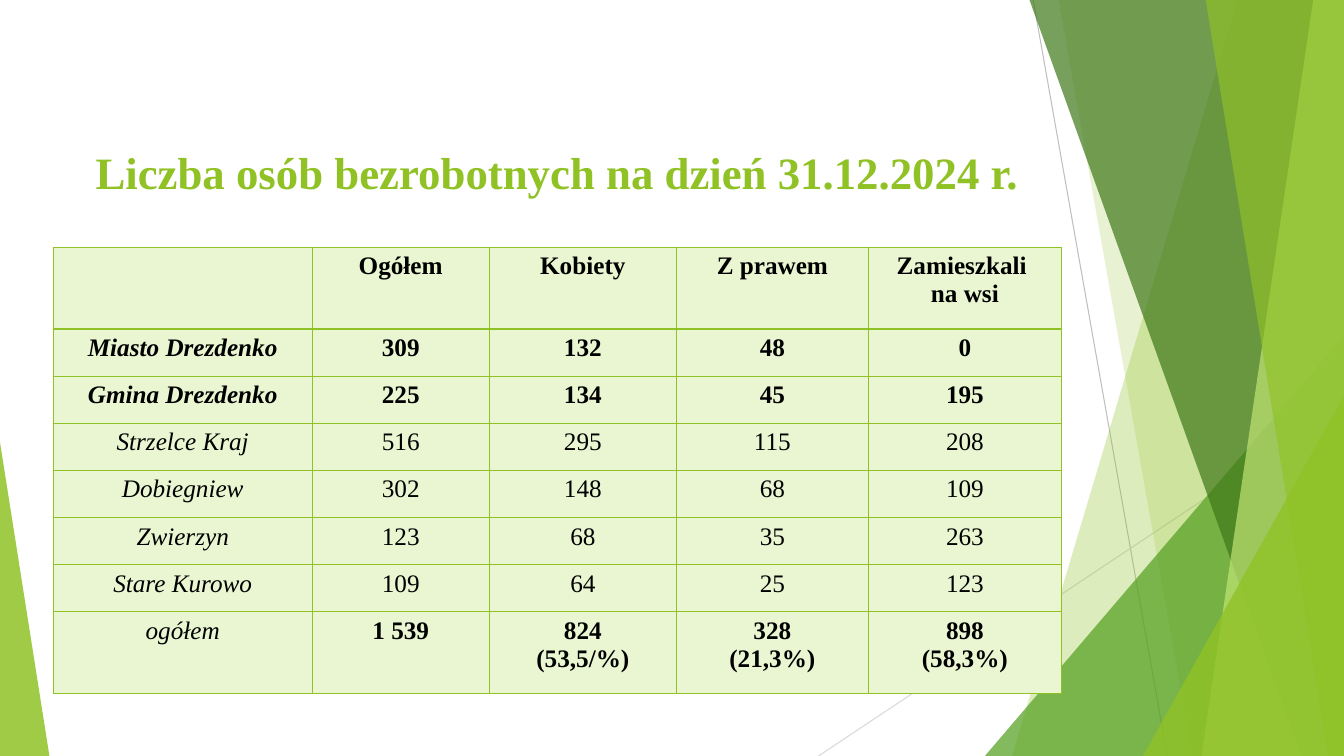
"""Build a slide with a table of unemployment figures by municipality."""

from dataclasses import dataclass

from lxml import etree
from pptx import Presentation
from pptx import util as u
from pptx.dml.color import RGBColor
from pptx.enum import shapes, text
from pptx.oxml import ns

WIDTH, HEIGHT, BLEED = 960, 540, -0.72
FONT = "Times New Roman"
LIME = RGBColor(0x90, 0xC2, 0x26)
LIGHT_LIME = RGBColor(0xC0, 0xE4, 0x74)
GREEN = RGBColor(0x54, 0xA0, 0x21)
DARK_GREEN = RGBColor(0x3F, 0x78, 0x19)
PALE_GREEN = RGBColor(0xEA, 0xF6, 0xD1)
GREY = RGBColor(0xBF, 0xBF, 0xBF)
LIGHT_GREY = RGBColor(0xD9, 0xD9, 0xD9)
BLACK = RGBColor(0, 0, 0)


@dataclass(frozen=True)
class Line:
    start: tuple[float, float]
    end: tuple[float, float]
    color: RGBColor


@dataclass(frozen=True)
class Band:
    """A full-height area from a slanted left edge to the right slide edge."""
    top_x: float
    bottom_x: float
    color: RGBColor
    opacity: int


@dataclass(frozen=True)
class Triangle:
    """A triangle standing on the bottom slide edge."""
    left: float
    top: float
    width: float
    apex: float
    color: RGBColor
    opacity: int


@dataclass(frozen=True)
class Row:
    cells: tuple[str, ...]
    height: float = 33.7
    bold_label: bool = False
    bold_values: bool = False
    bottom_border: float = 1


BACKDROP = (
    Line((738, 0), (833.76, HEIGHT), GREY),
    Line((WIDTH, 290.16), (584.64, HEIGHT), LIGHT_GREY),
    Band(884.16, 722.88, LIME, 30),
    Band(756, 851.76, LIME, 20),
    Triangle(703.5, 239.76, 256.5, 1, GREEN, 72),
    Band(735.12, 929.52, DARK_GREEN, 70),
    Band(938.16, 858.24, LIGHT_LIME, 70),
    Band(861.12, 948.96, LIME, 65),
    Triangle(816.5, 283, 143.5, 1, LIME, 80),
    Triangle(0, 316, 35.3, 0, LIME, 85),
)
COLUMN_WIDTHS = (185, 126.5, 133.75, 137, 138)
ROWS = (
    Row(("", "Ogółem", "Kobiety", "Z prawem", "Zamieszkali \nna wsi"), 58.4,
        bold_values=True, bottom_border=2),
    Row(("Miasto Drezdenko", "309", "132", "48", "0"),
        bold_label=True, bold_values=True),
    Row(("Gmina Drezdenko", "225", "134", "45", "195"),
        bold_label=True, bold_values=True),
    Row(("Strzelce Kraj", "516", "295", "115", "208")),
    Row(("Dobiegniew", "302", "148", "68", "109")),
    Row(("Zwierzyn", "123", "68", "35", "263")),
    Row(("Stare Kurowo", "109", "64", "25", "123")),
    Row(("ogółem", "1 539", "824\n(53,5/%)", "328\n(21,3%)", "898\n(58,3%)"),
        58.4, bold_values=True),
)


def draw_line(slide, line: Line) -> None:
    points = [u.Pt(value) for value in (*line.start, *line.end)]
    connector = slide.shapes.add_connector(
        shapes.MSO_CONNECTOR.STRAIGHT, *points)
    connector.line.color.rgb = line.color
    connector.line.width = u.Pt(0.75)
    etree.SubElement(connector.element.spPr, ns.qn("a:effectLst"))


def fill_translucent(shape, color: RGBColor, opacity: int) -> None:
    shape.shadow.inherit = False
    shape.line.fill.background()
    shape.fill.solid()
    shape.fill.fore_color.rgb = color
    color_node = next(shape.element.spPr.iter(ns.qn("a:srgbClr")))
    etree.SubElement(color_node, ns.qn("a:alpha"), val=str(opacity * 1000))


def draw_band(slide, band: Band) -> None:
    corners = ((band.top_x, BLEED), (WIDTH, BLEED),
               (WIDTH, HEIGHT), (band.bottom_x, HEIGHT))
    start, *others = [(u.Pt(x), u.Pt(y)) for x, y in corners]
    builder = slide.shapes.build_freeform(*start)
    builder.add_line_segments(others)
    fill_translucent(builder.convert_to_shape(), band.color, band.opacity)


def draw_triangle(slide, triangle: Triangle) -> None:
    shape = slide.shapes.add_shape(
        shapes.MSO_SHAPE.ISOSCELES_TRIANGLE, u.Pt(triangle.left),
        u.Pt(triangle.top), u.Pt(triangle.width), u.Pt(HEIGHT - triangle.top))
    shape.adjustments[0] = triangle.apex
    fill_translucent(shape, triangle.color, triangle.opacity)


def format_text(frame, size: float, color: RGBColor, bold: bool,
                italic: bool = False) -> None:
    for paragraph in frame.paragraphs:
        paragraph.alignment = text.PP_ALIGN.CENTER
        font = paragraph.font
        font.name, font.size = FONT, u.Pt(size)
        font.bold, font.italic = bold, italic
        font.color.rgb = color


def set_borders(cell, bottom: float) -> None:
    properties = cell._tc.get_or_add_tcPr()
    for side, width in (("L", 1), ("R", 1), ("T", 1), ("B", bottom)):
        border = etree.SubElement(
            properties, ns.qn(f"a:ln{side}"), w=str(u.Pt(width)))
        fill = etree.SubElement(border, ns.qn("a:solidFill"))
        etree.SubElement(fill, ns.qn("a:srgbClr"), val=str(LIME))


def draw_title(slide) -> None:
    title = slide.shapes.title
    title.left, title.top = u.Pt(38), u.Pt(99.5)
    title.width, title.height = u.Pt(720), u.Pt(65)
    frame = title.text_frame
    frame.text = "Liczba osób bezrobotnych na dzień 31.12.2024 r."
    frame.auto_size = text.MSO_AUTO_SIZE.NONE
    frame.vertical_anchor = text.MSO_ANCHOR.TOP
    format_text(frame, 32, LIME, bold=True)
    title.element.getparent().append(title.element)


def draw_table(slide) -> None:
    table = slide.shapes.add_table(
        len(ROWS), len(COLUMN_WIDTHS), u.Pt(38), u.Pt(176.6),
        u.Pt(sum(COLUMN_WIDTHS)), u.Pt(sum(row.height for row in ROWS))).table
    table.first_row = table.horz_banding = False
    for column, width in zip(table.columns, COLUMN_WIDTHS):
        column.width = u.Pt(width)
    for row_index, row in enumerate(ROWS):
        table.rows[row_index].height = u.Pt(row.height)
        for column_index, content in enumerate(row.cells):
            cell = table.cell(row_index, column_index)
            is_label = column_index == 0
            cell.text_frame.text = content
            format_text(cell.text_frame, 18, BLACK, italic=is_label,
                        bold=row.bold_label if is_label else row.bold_values)
            set_borders(cell, row.bottom_border)
            cell.fill.solid()
            cell.fill.fore_color.rgb = PALE_GREEN


def main() -> None:
    presentation = Presentation()
    presentation.slide_width, presentation.slide_height = u.Pt(WIDTH), u.Pt(HEIGHT)
    slide = presentation.slides.add_slide(presentation.slide_layouts[5])
    painters = {Line: draw_line, Band: draw_band, Triangle: draw_triangle}
    for item in BACKDROP:
        painters[type(item)](slide, item)
    draw_title(slide)
    draw_table(slide)
    presentation.save("out.pptx")


if __name__ == "__main__":
    main()
